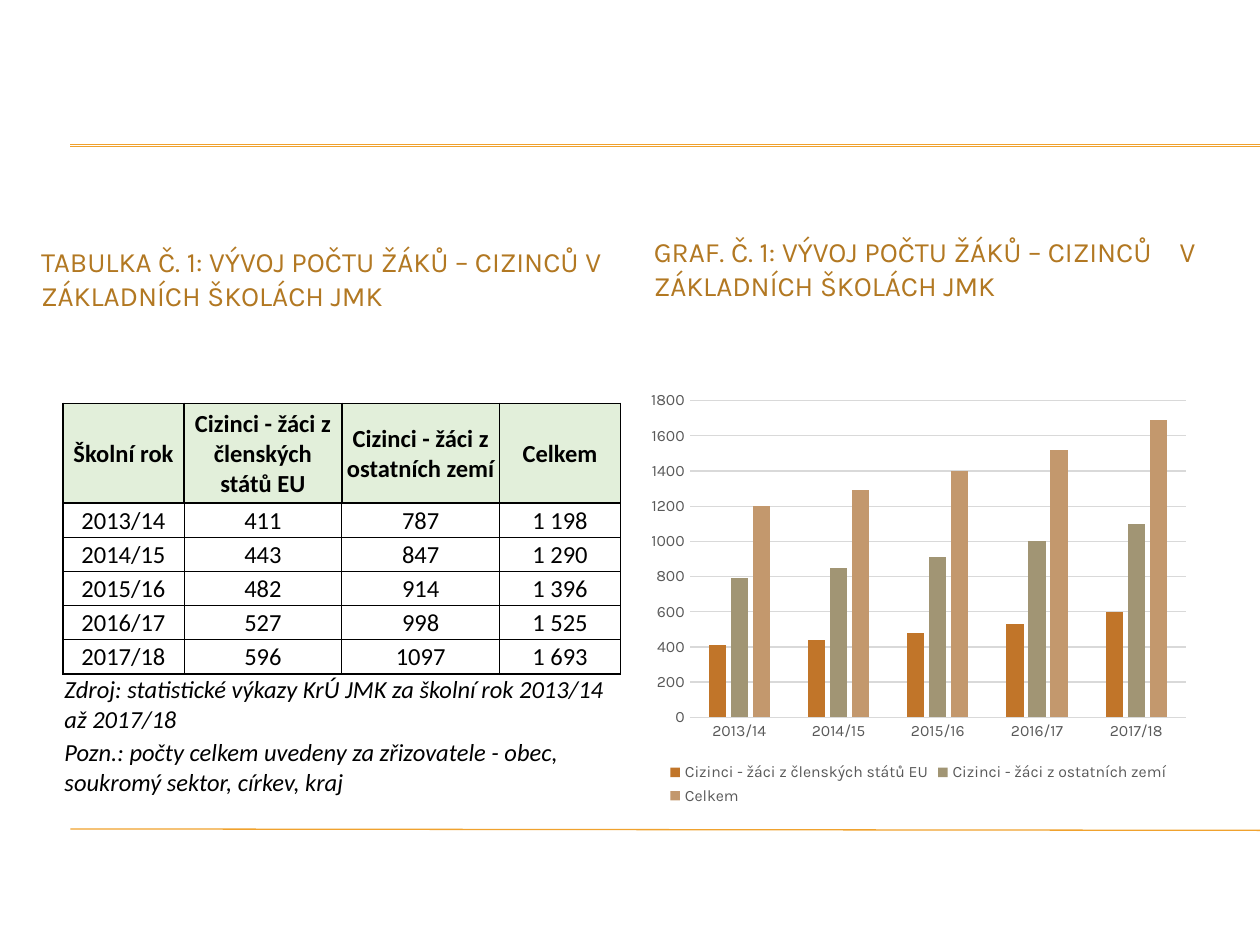
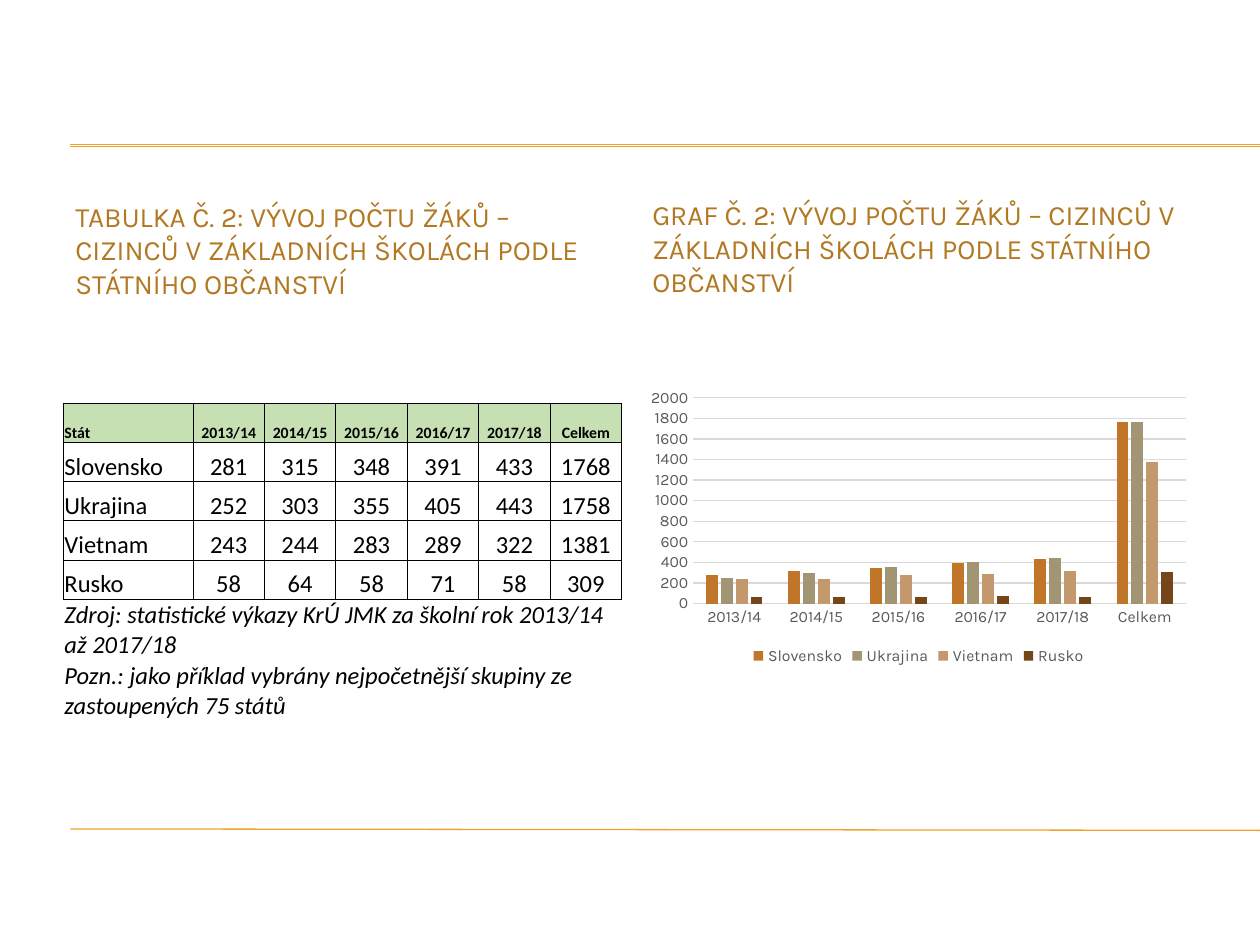
"""Build two slides on the numbers of foreign pupils, each with a table and a chart."""
from dataclasses import dataclass

from lxml import etree
from pptx import Presentation
from pptx import util as u
from pptx.chart import data as chart_data
from pptx.dml.color import RGBColor
from pptx.enum import chart as charts
from pptx.enum import shapes, text
from pptx.oxml.ns import qn


@dataclass(frozen=True)
class Theme:
    """Hold the colours, fonts and sizes of the deck."""

    rule: str = "F0A22E"
    heading: str = "B27822"
    ink: str = "000000"
    axis_text: str = "595959"
    grid: str = "D9D9D9"
    series: tuple = ("C17529", "A19574", "C3986D", "744619")
    display_font: str = "Karla"
    table_font: str = "Calibri"
    heading_size: int = 16
    table_size: int = 14
    small_header_size: int = 9
    chart_size: int = 9
    hairline: float = 0.5
    rule_width: float = 0.75


@dataclass(frozen=True)
class TableLook:
    """Describe how one table differs from the other."""

    widths: tuple
    header_height: float
    row_height: float
    note_heights: tuple
    header_fill: str
    header_size: int
    frame: float
    anchor: text.MSO_ANCHOR
    first_align: text.PP_ALIGN


THEME = Theme()
LEFT, RIGHT, HALF = 1.27, 12.9, 11.23
TABLE_TOP, CHART_TOP = 8.13, 7.72
HEADING_HEIGHT, HEADING_WIDTH = 1.78, 11.91
RULES = ((2.92, 2.92), (2.95, 2.95), (16.71, 16.74))
SOURCE = "Zdroj: statistické výkazy KrÚ JMK za školní rok 2013/14 až 2017/18"

YEAR_ROWS = (
    ("Školní rok", "Cizinci - žáci z členských států EU",
     "Cizinci - žáci z ostatních zemí", "Celkem"),
    ("2013/14", "411", "787", "1 198"),
    ("2014/15", "443", "847", "1 290"),
    ("2015/16", "482", "914", "1 396"),
    ("2016/17", "527", "998", "1 525"),
    ("2017/18", "596", "1097", "1 693"),
)
YEAR_NOTES = (SOURCE, "Pozn.: počty celkem uvedeny za zřizovatele - obec, "
                      "soukromý sektor, církev, kraj")
YEAR_LOOK = TableLook(
    (2.44, 3.18, 3.18, 2.44), 2.01, 0.69, (0.69, 1.35), "E2EFDA",
    THEME.table_size, 1, text.MSO_ANCHOR.MIDDLE, text.PP_ALIGN.CENTER)

STATE_ROWS = (
    ("Stát", "2013/14", "2014/15", "2015/16", "2016/17", "2017/18", "Celkem"),
    ("Slovensko", "281", "315", "348", "391", "433", "1768"),
    ("Ukrajina", "252", "303", "355", "405", "443", "1758"),
    ("Vietnam", "243", "244", "283", "289", "322", "1381"),
    ("Rusko", "58", "64", "58", "71", "58", "309"),
)
STATE_NOTES = (SOURCE, "Pozn.: jako příklad vybrány nejpočetnější skupiny ze "
                       "zastoupených 75 států")
STATE_LOOK = TableLook(
    (2.62,) + (1.44,) * 6, 0.79, 0.79, (0.79, 0.79), "C6E0B4",
    THEME.small_header_size, THEME.hairline, text.MSO_ANCHOR.BOTTOM,
    text.PP_ALIGN.LEFT)


def style_font(font, name, size, color):
    """Set the face, size and colour of a font."""
    font.name = name
    font.size = u.Pt(size)
    font.color.rgb = RGBColor.from_string(color)


def style_line(line, color, width):
    """Set the colour and width of a line."""
    line.color.rgb = RGBColor.from_string(color)
    line.width = u.Pt(width)


def add_page(deck):
    """Add a blank page with the shared rules."""
    page = deck.slides.add_slide(deck.slide_layouts[6])
    for start, end in RULES:
        rule = page.shapes.add_connector(
            shapes.MSO_CONNECTOR.STRAIGHT,
            u.Cm(1.42), u.Cm(start), deck.slide_width, u.Cm(end))
        style_line(rule.line, THEME.rule, THEME.rule_width)
        etree.SubElement(rule._element.spPr, qn("a:effectLst"))
    return page


def add_heading(page, wording, left, top, width=HEADING_WIDTH, tab=None):
    """Add a heading, with a tab stop where one is needed."""
    box = page.shapes.add_textbox(
        u.Cm(left), u.Cm(top), u.Cm(width), u.Cm(HEADING_HEIGHT))
    frame = box.text_frame
    frame.word_wrap = True
    frame.vertical_anchor = text.MSO_ANCHOR.MIDDLE
    para = frame.paragraphs[0]
    para.text = wording
    if tab:
        stops = etree.SubElement(para._p.get_or_add_pPr(), qn("a:tabLst"))
        etree.SubElement(stops, qn("a:tab"), pos=str(u.Cm(tab)), algn="l")
    for span in para.runs:
        style_font(span.font, THEME.display_font, THEME.heading_size, THEME.heading)


def set_borders(cell, left=0, right=0, top=0, bottom=0):
    """Draw the four cell borders in points, where zero means none."""
    properties = cell._tc.get_or_add_tcPr()
    for index, (side, width) in enumerate(
            (("L", left), ("R", right), ("T", top), ("B", bottom))):
        border = etree.Element(qn(f"a:ln{side}"), w=str(u.Pt(width)))
        if width:
            fill = etree.SubElement(border, qn("a:solidFill"))
            etree.SubElement(fill, qn("a:srgbClr"), val=THEME.ink)
        else:
            etree.SubElement(border, qn("a:noFill"))
        properties.insert(index, border)


def fill_cell(cell, wording, size, align, anchor, fill=None):
    """Write and format one table cell."""
    cell.margin_left = cell.margin_right = cell.margin_top = u.Cm(0.03)
    cell.margin_bottom = 0
    cell.vertical_anchor = anchor
    if fill:
        cell.fill.solid()
        cell.fill.fore_color.rgb = RGBColor.from_string(fill)
    else:
        cell.fill.background()
    para = cell.text_frame.paragraphs[0]
    para.text = wording
    para.alignment = align
    for span in para.runs:
        style_font(span.font, THEME.table_font, size, THEME.ink)
        span.font.bold = bool(fill)
    return para


def add_notes(table, notes, first_row, look):
    """Fill the merged, unframed rows below the figures."""
    last_column = len(look.widths) - 1
    for index, note in enumerate(notes):
        row = first_row + index
        table.cell(row, 0).merge(table.cell(row, last_column))
        anchor = look.anchor if index else text.MSO_ANCHOR.BOTTOM
        para = fill_cell(table.cell(row, 0), note, THEME.table_size,
                         text.PP_ALIGN.LEFT, anchor)
        para.runs[0].font.italic = True
        for column in range(last_column + 1):
            set_borders(table.cell(row, column), top=0 if index else look.frame)


def add_figures(page, rows, notes, look):
    """Add the table of figures with its notes."""
    heights = (look.header_height,) + (look.row_height,) * (len(rows) - 1)
    heights += look.note_heights
    table = page.shapes.add_table(
        len(heights), len(look.widths), u.Cm(LEFT), u.Cm(TABLE_TOP),
        u.Cm(sum(look.widths)), u.Cm(sum(heights))).table
    table.first_row = table.horz_banding = False
    for column, width in zip(table.columns, look.widths):
        column.width = u.Cm(width)
    for row, height in zip(table.rows, heights):
        row.height = u.Cm(height)

    last_row, last_column = len(rows) - 1, len(look.widths) - 1
    for r, row in enumerate(rows):
        for c, wording in enumerate(row):
            header = r == 0
            cell = table.cell(r, c)
            fill_cell(cell, wording,
                      look.header_size if header else THEME.table_size,
                      text.PP_ALIGN.CENTER if c else look.first_align,
                      look.anchor, look.header_fill if header else None)
            framed = {"left": header or c == 0,
                      "right": header or c == last_column,
                      "top": r <= 1, "bottom": header or r == last_row}
            set_borders(cell, **{side: look.frame if outer else THEME.hairline
                                 for side, outer in framed.items()})
    add_notes(table, notes, len(rows), look)


def add_columns(page, rows, height, maximum):
    """Add a column chart of the rows, rounded to tens."""
    figures = chart_data.CategoryChartData()
    figures.categories = rows[0][1:]
    for name, *values in rows[1:]:
        figures.add_series(
            name, [round(int(value.replace(" ", "")), -1) for value in values])
    chart = page.shapes.add_chart(
        charts.XL_CHART_TYPE.COLUMN_CLUSTERED, u.Cm(RIGHT), u.Cm(CHART_TOP),
        u.Cm(HALF), u.Cm(height), figures).chart
    chart.has_title = False
    style_font(chart.font, THEME.display_font, 10, THEME.ink)
    plot = chart.plots[0]
    plot.gap_width, plot.overlap, plot.vary_by_categories = 219, -27, False
    for series, color in zip(plot.series, THEME.series):
        series.format.fill.solid()
        series.format.fill.fore_color.rgb = RGBColor.from_string(color)

    chart.has_legend = True
    chart.legend.position = charts.XL_LEGEND_POSITION.BOTTOM
    chart.legend.include_in_layout = False
    category, value = chart.category_axis, chart.value_axis
    for axis in (category, value):
        axis.major_tick_mark = axis.minor_tick_mark = charts.XL_TICK_MARK.NONE
    for part in (category.tick_labels, value.tick_labels, chart.legend):
        style_font(part.font, THEME.display_font, THEME.chart_size, THEME.axis_text)
    style_line(category.format.line, THEME.grid, THEME.rule_width)
    style_line(value.major_gridlines.format.line, THEME.grid, THEME.rule_width)
    value.format.line.fill.background()
    value.minimum_scale, value.maximum_scale, value.major_unit = 0, maximum, 200


def main():
    """Build and save the deck."""
    deck = Presentation()
    deck.slide_width, deck.slide_height = u.Cm(25.4), u.Cm(19.05)

    page = add_page(deck)
    add_heading(page, "TABULKA Č. 1: VÝVOJ POČTU ŽÁKŮ – CIZINCŮ V "
                      "ZÁKLADNÍCH ŠKOLÁCH JMK", 0.58, 4.72)
    add_figures(page, YEAR_ROWS, YEAR_NOTES, YEAR_LOOK)
    add_heading(page, "GRAF. Č. 1: VÝVOJ POČTU ŽÁKŮ – CIZINCŮ\tV "
                      "ZÁKLADNÍCH ŠKOLÁCH JMK", 12.93, 4.52, tab=10.6)
    add_columns(page, tuple(zip(*YEAR_ROWS)), 8.61, 1800)

    page = add_page(deck)
    subject = ("VÝVOJ POČTU ŽÁKŮ – CIZINCŮ V ZÁKLADNÍCH ŠKOLÁCH "
               "PODLE STÁTNÍHO OBČANSTVÍ")
    add_heading(page, f"TABULKA Č. 2: {subject}", LEFT, 4.14, HALF)
    add_heading(page, f"GRAF Č. 2: {subject}", RIGHT, 4.11)
    add_columns(page, STATE_ROWS, 5.79, 2000)
    add_figures(page, STATE_ROWS, STATE_NOTES, STATE_LOOK)

    deck.save("out.pptx")


if __name__ == "__main__":
    main()
